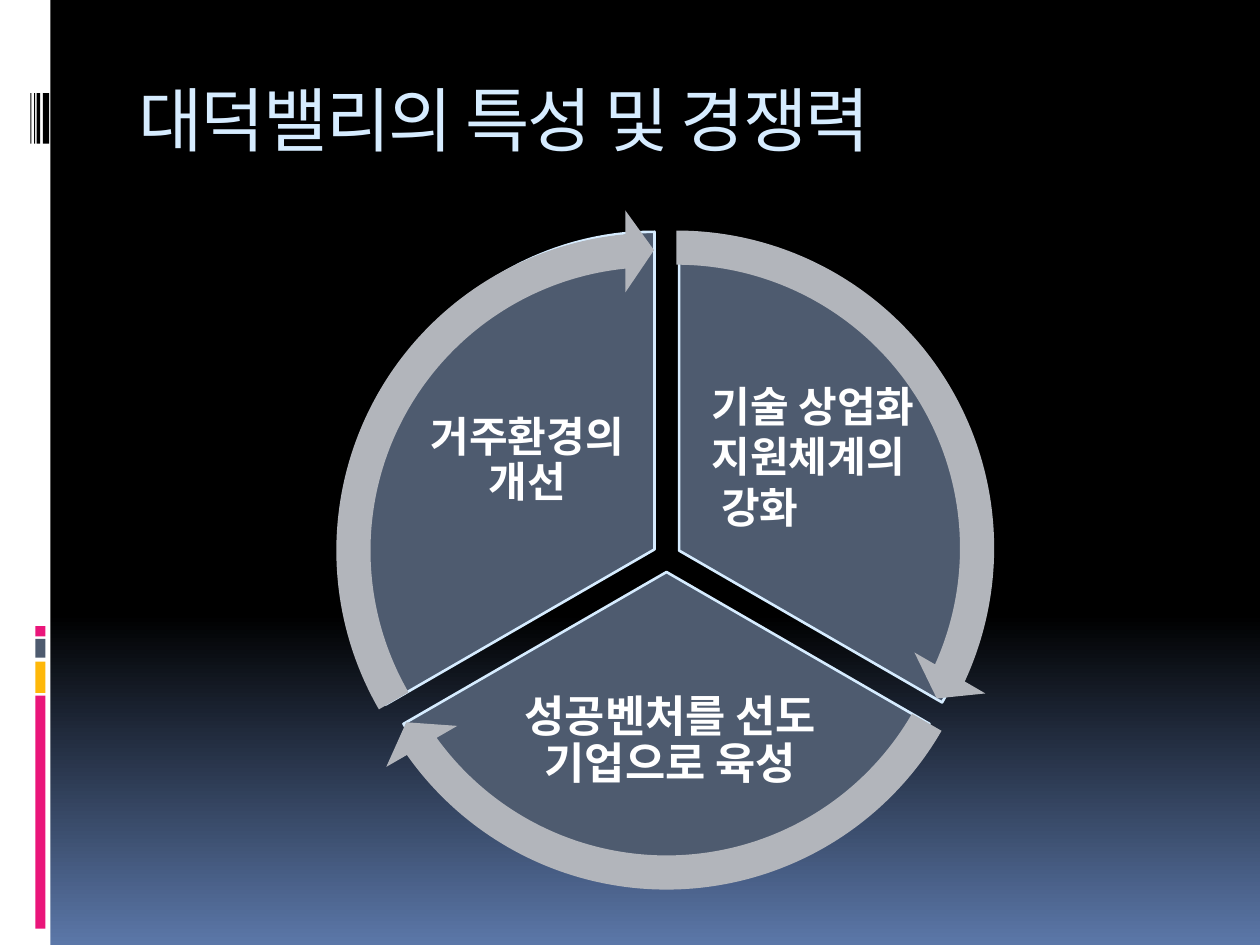
import pptx
import pptx.dml.color
import pptx.enum.shapes
import pptx.enum.text
import pptx.util

Inches = pptx.util.Inches
RGBColor = pptx.dml.color.RGBColor
Shape = pptx.enum.shapes.MSO_SHAPE
Align = pptx.enum.text.PP_ALIGN
Anchor = pptx.enum.text.MSO_ANCHOR

BLACK = RGBColor(0x00, 0x00, 0x00)
WHITE = RGBColor(0xFF, 0xFF, 0xFF)
BLUE = RGBColor(0x5B, 0x77, 0xA8)
PALE_BLUE = RGBColor(0xD6, 0xEC, 0xFF)
SLATE = RGBColor(0x4E, 0x5B, 0x6F)
GRAY = RGBColor(0xB2, 0xB5, 0xBB)
PINK = RGBColor(0xEA, 0x15, 0x7A)
AMBER = RGBColor(0xFE, 0xB8, 0x0A)

SIDE_BLOCKS = [(5.52, 1.85, PINK), (5.25, 0.25, AMBER), (5.07, 0.15, SLATE), (4.97, 0.08, PINK)]
BARCODE = [(0.34, 0.05), (0.29, 0.03), (0.27, 0.01), (0.24, 0.01)]
SECTORS = [
    ((2.98, 1.96, 4.82, 4.82), (162, 18)),
    ((2.88, 2.13, 4.82, 4.82), (18, 90)),
    ((2.75, 1.84, 4.89, 5.04), (90, 162)),
]
ARROWS = [(2.66, 1.64, 14.73, 161.99), (2.58, 1.83, 86.72, 18), (2.48, 1.66, 158.73, 90)]
ARROW_SIZE = 5.42


def paint_background(page):
    """Fade the page from black down to blue."""
    fill = page.background.fill
    fill.gradient()
    fill.gradient_angle = 270
    for stop, position, color in zip(fill.gradient_stops, (0.65, 1), (BLACK, BLUE)):
        stop.position = position
        stop.color.rgb = color


def add_figure(page, kind, bounds, color, adjustments=(), outline=None):
    """Add a flat preset shape with optional adjustments and outline."""
    figure = page.shapes.add_shape(kind, *map(Inches, bounds))
    figure.shadow.inherit = False
    figure.fill.solid()
    figure.fill.fore_color.rgb = color
    for index, value in enumerate(adjustments):
        figure.adjustments[index] = value
    if outline is None:
        figure.line.fill.background()
    else:
        figure.line.color.rgb = outline
        figure.line.width = pptx.util.Pt(1.5)


def add_text(page, bounds, lines, size=24, font="Calibri", color=WHITE, bold=True,
             align=Align.LEFT, anchor=Anchor.TOP, inset=None, leading=None, tracking=None):
    """Add a wrapped text box with one paragraph for each line."""
    box = page.shapes.add_textbox(*map(Inches, bounds))
    frame = box.text_frame
    frame.word_wrap = True
    frame.vertical_anchor = anchor
    if inset is not None:
        frame.margin_left = frame.margin_right = Inches(inset)
        frame.margin_top = frame.margin_bottom = Inches(inset)
    for index, line in enumerate(lines):
        para = frame.add_paragraph() if index else frame.paragraphs[0]
        para.alignment = align
        para.line_spacing = leading
        span = para.add_run()
        span.text = line
        span.font.size = pptx.util.Pt(size)
        span.font.name = font
        span.font.bold = bold
        span.font.color.rgb = color
        if tracking is not None:
            span.font._element.set("spc", str(tracking * 100))


def add_side_band(page):
    """Draw the white band with its colour blocks and barcode."""
    add_figure(page, Shape.RECTANGLE, (0, 0, 0.4, 7.5), WHITE)
    for top, height, color in SIDE_BLOCKS:
        add_figure(page, Shape.RECTANGLE, (0.28, top, 0.08, height), color)
    for left, width in BARCODE:
        add_figure(page, Shape.RECTANGLE, (left, 0.74, width, 0.4), BLACK)


def add_cycle(page):
    """Draw the three labelled sectors and the arrows around them."""
    for bounds, angles in SECTORS:
        add_figure(page, Shape.PIE, bounds, SLATE, angles, PALE_BLUE)
    for left, top, end, start in ARROWS:
        add_figure(page, Shape.CIRCULAR_ARROW, (left, top, ARROW_SIZE, ARROW_SIZE), GRAY,
                   (0.05, 3.28, end, start, 0.06))
    centred = dict(align=Align.CENTER, anchor=Anchor.MIDDLE, inset=0.03, leading=0.9)
    add_text(page, (4.03, 5.26, 2.58, 1.26), ["성공벤처를 선도 기업으로 육성"], size=25, **centred)
    add_text(page, (3.31, 2.91, 1.75, 1.5), ["거주환경의 개선"], **centred)
    add_text(page, (5.55, 2.97, 2.81, 1.31), ["기술 상업화", "지원체계의", " 강화"])


def main():
    """Build and save the slide."""
    deck = pptx.Presentation()
    deck.slide_width, deck.slide_height = Inches(10), Inches(7.5)
    page = deck.slides.add_slide(deck.slide_layouts[6])
    paint_background(page)
    add_side_band(page)
    add_text(page, (1, 0.56, 8.5, 1), ["대덕밸리의 특성 및 경쟁력"], size=40,
             font="Noto Sans Mono", color=PALE_BLUE, bold=False, tracking=-1)
    add_cycle(page)
    deck.save("out.pptx")


if __name__ == "__main__":
    main()
